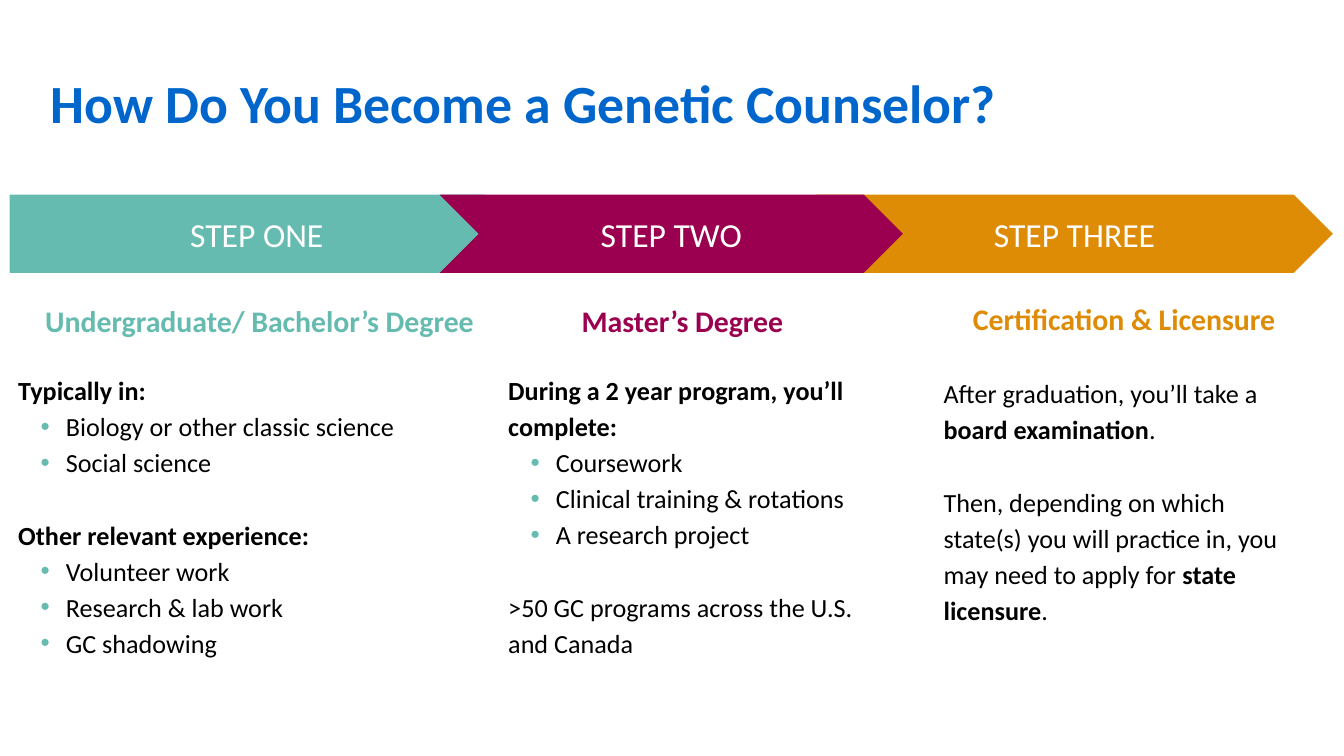
from dataclasses import dataclass
from lxml.etree import SubElement
from pptx import Presentation
from pptx.dml.color import RGBColor
from pptx.enum.shapes import MSO_SHAPE
from pptx.enum.text import MSO_ANCHOR, PP_ALIGN
from pptx.oxml.ns import qn
from pptx.util import Emu, Pt

SCALE = 9525


@dataclass(frozen=True)
class Theme:
    font: str = "Calibri"
    blue: str = "0066CC"
    teal: str = "66BBB0"
    plum: str = "9A004F"
    gold: str = "DE8B05"
    black: str = "000000"
    white: str = "FFFFFF"
    title: float = 28.8
    label: int = 18
    head: int = 16
    body: int = 14


THEME = Theme()


def px(*sizes):
    return [Emu(size * SCALE) for size in sizes]


def set_up(frame, anchor):
    frame.word_wrap = True
    frame.vertical_anchor = anchor
    inset = px(10)[0]
    frame.margin_left = frame.margin_right = inset
    frame.margin_top = frame.margin_bottom = inset


def add_box(slide, box):
    frame = slide.shapes.add_textbox(*px(*box)).text_frame
    set_up(frame, MSO_ANCHOR.TOP)
    return frame


def add_dot(para):
    props = para._p.get_or_add_pPr()
    left, hang = px(34, -18)
    props.set("marL", str(left))
    props.set("indent", str(hang))
    color = SubElement(props, qn("a:buClr"))
    SubElement(color, qn("a:srgbClr"), val=THEME.teal)
    SubElement(props, qn("a:buFont"), typeface="Arial")
    SubElement(props, qn("a:buChar"), char="•")


def write(frame, text, size=THEME.body, color=THEME.black, align=PP_ALIGN.LEFT,
          line=1.15, gap=0, dot=False):
    para = frame.paragraphs[0]
    if para.runs:
        para = frame.add_paragraph()
    para.alignment = align
    para.line_spacing = line
    if gap:
        para.space_before = Pt(gap)
    if dot:
        add_dot(para)
    for index, part in enumerate(text.split("**")):
        if part:
            run = para.add_run()
            run.text = part
            font = run.font
            font.name = THEME.font
            font.size = Pt(size)
            font.bold = index % 2 == 1
            font.color.rgb = RGBColor.from_string(color)


def add_title(slide, box):
    write(add_box(slide, box), "**How Do You Become a Genetic Counselor?**",
          size=THEME.title, color=THEME.blue, line=1)


def add_arrow(slide, box, kind, text, color):
    arrow = slide.shapes.add_shape(kind, *px(*box))
    arrow.shadow.inherit = False
    arrow.fill.solid()
    arrow.fill.fore_color.rgb = RGBColor.from_string(color)
    arrow.line.fill.background()
    set_up(arrow.text_frame, MSO_ANCHOR.MIDDLE)
    write(arrow.text_frame, text, size=THEME.label, color=THEME.white,
          align=PP_ALIGN.CENTER, line=1)


def add_step(slide, box, kind, label, color, panel, head, rows):
    left, top, width, height = box
    shift, drop, wide, tall = panel
    add_arrow(slide, box, kind, label, color)
    frame = add_box(slide, (left + shift, top + drop, wide, tall))
    write(frame, f"**{head}**", size=THEME.head, color=color,
          align=PP_ALIGN.CENTER)
    for text, form in rows:
        write(frame, text, **form)


def main():
    deck = Presentation()
    deck.slide_width, deck.slide_height = px(960, 540)
    slide = deck.slides.add_slide(deck.slide_layouts[6])
    add_title(slide, (26, 40, 735, 85))

    dot = {"dot": True}
    first = {"gap": 17}
    later = {"gap": 19.5}
    add_step(
        slide, (583, 139, 369, 56), MSO_SHAPE.CHEVRON, "STEP THREE",
        THEME.gold, (81, 62, 278, 216), "Certification & Licensure",
        [("After graduation, you’ll take a **board examination**.", later),
         ("Then, depending on which state(s) you will practice in, you may "
          "need to apply for **state licensure**.", later)])
    add_step(
        slide, (7, 139, 367, 56), MSO_SHAPE.PENTAGON, "STEP ONE",
        THEME.teal, (-4, 63, 365, 216), "Undergraduate/ Bachelor’s Degree",
        [("**Typically in:**", first),
         ("Biology or other classic science", dot),
         ("Social science", dot),
         ("**Other relevant experience:**", later),
         ("Volunteer work", dot),
         ("Research & lab work", dot),
         ("GC shadowing", dot)])
    add_step(
        slide, (314, 139, 331, 56), MSO_SHAPE.CHEVRON, "STEP TWO",
        THEME.plum, (39, 63, 269, 216), "Master’s Degree",
        [("**During a 2 year program, you’ll complete:**", first),
         ("Coursework", dot),
         ("Clinical training & rotations", dot),
         ("A research project", dot),
         (">50 GC programs across the U.S. and Canada", later)])
    deck.save("out.pptx")


if __name__ == "__main__":
    main()
